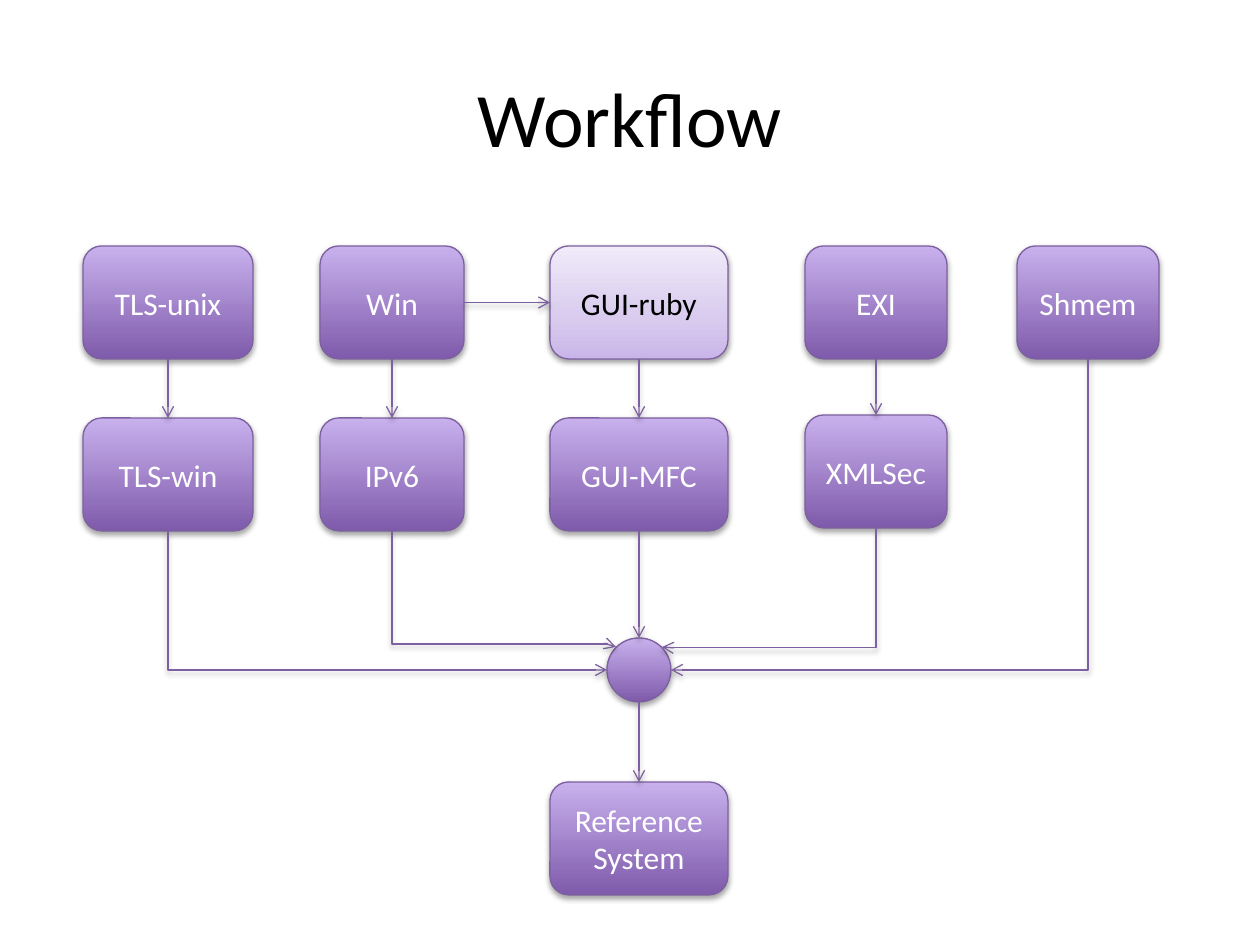
from copy import deepcopy
from dataclasses import dataclass

from lxml.etree import SubElement
from pptx import Presentation
from pptx.dml.color import RGBColor
from pptx.enum.shapes import MSO_CONNECTOR as Link, MSO_SHAPE as Form
from pptx.enum.text import MSO_ANCHOR as Anchor, PP_ALIGN as Align
from pptx.oxml.ns import qn
from pptx.util import Emu, Pt

SCALE = 914400 / 126
FONT = "Calibri"
BLACK = RGBColor(0x00, 0x00, 0x00)
WHITE = RGBColor(0xFF, 0xFF, 0xFF)
OUTLINE = RGBColor(0x7D, 0x60, 0xA0)
STRONG = ((0, RGBColor(0x7F, 0x5B, 0xAB)), (1, RGBColor(0xC8, 0xB0, 0xED)))
PALE = (
    (0, RGBColor(0xC9, 0xB5, 0xE8)),
    (0.35, RGBColor(0xD8, 0xCB, 0xEE)),
    (1, RGBColor(0xF0, 0xEA, 0xF9)),
)
TOP, LEFT, BOTTOM, RIGHT = range(4)
BOX_HEIGHT = 113
FIRST_ROW, SECOND_ROW, LAST_ROW = 246, 418, 782
HUB_X, HUB_Y, HUB_RADIUS = 639, 670, 32


@dataclass(frozen=True)
class Step:
    text: str
    left: int
    top: int
    width: int
    stops: tuple = STRONG
    color: RGBColor = WHITE


@dataclass(frozen=True)
class Bend:
    source: str
    end_x: int
    end_y: int
    turn: float = 1


STEPS = (
    Step("TLS-unix", 83, FIRST_ROW, 170),
    Step("TLS-win", 83, SECOND_ROW, 170),
    Step("Win", 320, FIRST_ROW, 144),
    Step("IPv6", 320, SECOND_ROW, 144),
    Step("GUI-ruby", 550, FIRST_ROW, 178, PALE, BLACK),
    Step("GUI-MFC", 550, SECOND_ROW, 178),
    Step("EXI", 805, FIRST_ROW, 142),
    Step("XMLSec", 805, 415, 142),
    Step("Shmem", 1017, FIRST_ROW, 142),
    Step("Reference\nSystem", 550, LAST_ROW, 178),
)
ARROWS = (
    ("TLS-unix", BOTTOM, "TLS-win", TOP),
    ("Win", BOTTOM, "IPv6", TOP),
    ("GUI-ruby", BOTTOM, "GUI-MFC", TOP),
    ("EXI", BOTTOM, "XMLSec", TOP),
    ("Win", RIGHT, "GUI-ruby", LEFT),
)
BENDS = (
    Bend("TLS-win", HUB_X - HUB_RADIUS, HUB_Y),
    Bend("IPv6", 616, 647, 0.975),
    Bend("XMLSec", 662, 647, 1.007),
    Bend("Shmem", HUB_X + HUB_RADIUS, HUB_Y),
)


def px(length: float) -> Emu:
    return Emu(round(length * SCALE))


def add_shadow(item, opacity: int = 35, distance: int = 23000) -> None:
    effects = SubElement(item._element.spPr, qn("a:effectLst"))
    shadow = SubElement(effects, qn("a:outerShdw"), blurRad="40000",
                        dist=str(distance), dir="5400000", rotWithShape="0")
    color = SubElement(shadow, qn("a:srgbClr"), val="000000")
    SubElement(color, qn("a:alpha"), val=str(opacity * 1000))


def write(frame, text: str, size: int, color: RGBColor) -> None:
    frame.word_wrap = True
    frame.vertical_anchor = Anchor.MIDDLE
    for index, line in enumerate(text.split("\n")):
        para = frame.add_paragraph() if index else frame.paragraphs[0]
        para.alignment = Align.CENTER
        span = para.add_run()
        span.text = line
        span.font.name = FONT
        span.font.size = Pt(size)
        span.font.color.rgb = color


def style_shape(shape, stops: tuple) -> None:
    shape.fill.gradient()
    shape.fill.gradient_angle = 90
    stop_list = shape._element.spPr.find(qn("a:gradFill")).find(qn("a:gsLst"))
    for _ in stops[2:]:
        stop_list.append(deepcopy(stop_list[0]))
    for stop, (position, color) in zip(shape.fill.gradient_stops, stops):
        stop.position = position
        stop.color.rgb = color
    shape.line.color.rgb = OUTLINE
    shape.line.width = Pt(0.75)
    if stops is PALE:
        add_shadow(shape, 38, 20000)
    else:
        add_shadow(shape)


def add_step(page, step: Step):
    box = page.shapes.add_shape(Form.ROUNDED_RECTANGLE, px(step.left), px(step.top),
                                px(step.width), px(BOX_HEIGHT))
    style_shape(box, step.stops)
    write(box.text_frame, step.text, 18, step.color)
    return box


def style_arrow(arrow) -> None:
    arrow.line.color.rgb = OUTLINE
    arrow.line.width = Pt(0.75)
    SubElement(arrow.line._get_or_add_ln(), qn("a:tailEnd"), type="arrow")
    add_shadow(arrow)


def add_straight(page, start_y: int = 0, end_y: int = 0):
    arrow = page.shapes.add_connector(Link.STRAIGHT, px(HUB_X), px(start_y),
                                      px(HUB_X), px(end_y))
    style_arrow(arrow)
    return arrow


def add_bend(page, bend: Bend, box) -> None:
    start_x = box.left + box.width // 2
    start_y = box.top + box.height
    end_x, end_y = px(bend.end_x), px(bend.end_y)
    run, drop = abs(end_x - start_x), end_y - start_y
    left = (start_x + end_x - drop) // 2
    top = (start_y + end_y - run) // 2
    goes_right = end_x > start_x
    near, far = (left + drop, left) if goes_right else (left, left + drop)
    arrow = page.shapes.add_connector(Link.ELBOW, near, top, far, top + run)
    outline = arrow._element.spPr
    outline.find(qn("a:xfrm")).set("rot", "16200000" if goes_right else "5400000")
    geometry = outline.find(qn("a:prstGeom"))
    if bend.turn == 1:
        geometry.set("prst", "bentConnector2")
    else:
        SubElement(geometry.find(qn("a:avLst")), qn("a:gd"), name="adj1",
                   fmla=f"val {round(bend.turn * 100000)}")
    style_arrow(arrow)


def main() -> None:
    deck = Presentation()
    deck.slide_width, deck.slide_height = px(1260), px(945)
    page = deck.slides.add_slide(deck.slide_layouts[6])
    title = page.shapes.add_textbox(px(63), px(38), px(1134), px(157))
    write(title.text_frame, "Workflow", 44, BLACK)

    boxes = {step.text: add_step(page, step) for step in STEPS}
    hub = page.shapes.add_shape(Form.OVAL, px(HUB_X - HUB_RADIUS), px(HUB_Y - HUB_RADIUS),
                                px(2 * HUB_RADIUS), px(2 * HUB_RADIUS))
    style_shape(hub, STRONG)

    for source, source_side, target, target_side in ARROWS:
        arrow = add_straight(page)
        arrow.begin_connect(boxes[source], source_side)
        arrow.end_connect(boxes[target], target_side)
    for bend in BENDS:
        add_bend(page, bend, boxes[bend.source])
    into_hub = add_straight(page, SECOND_ROW + BOX_HEIGHT, HUB_Y - HUB_RADIUS)
    into_hub.begin_connect(boxes["GUI-MFC"], BOTTOM)
    into_hub.end_connect(hub, TOP)
    from_hub = add_straight(page, HUB_Y + HUB_RADIUS, LAST_ROW)
    from_hub.end_connect(boxes["Reference\nSystem"], TOP)

    deck.save("out.pptx")


if __name__ == "__main__":
    main()
